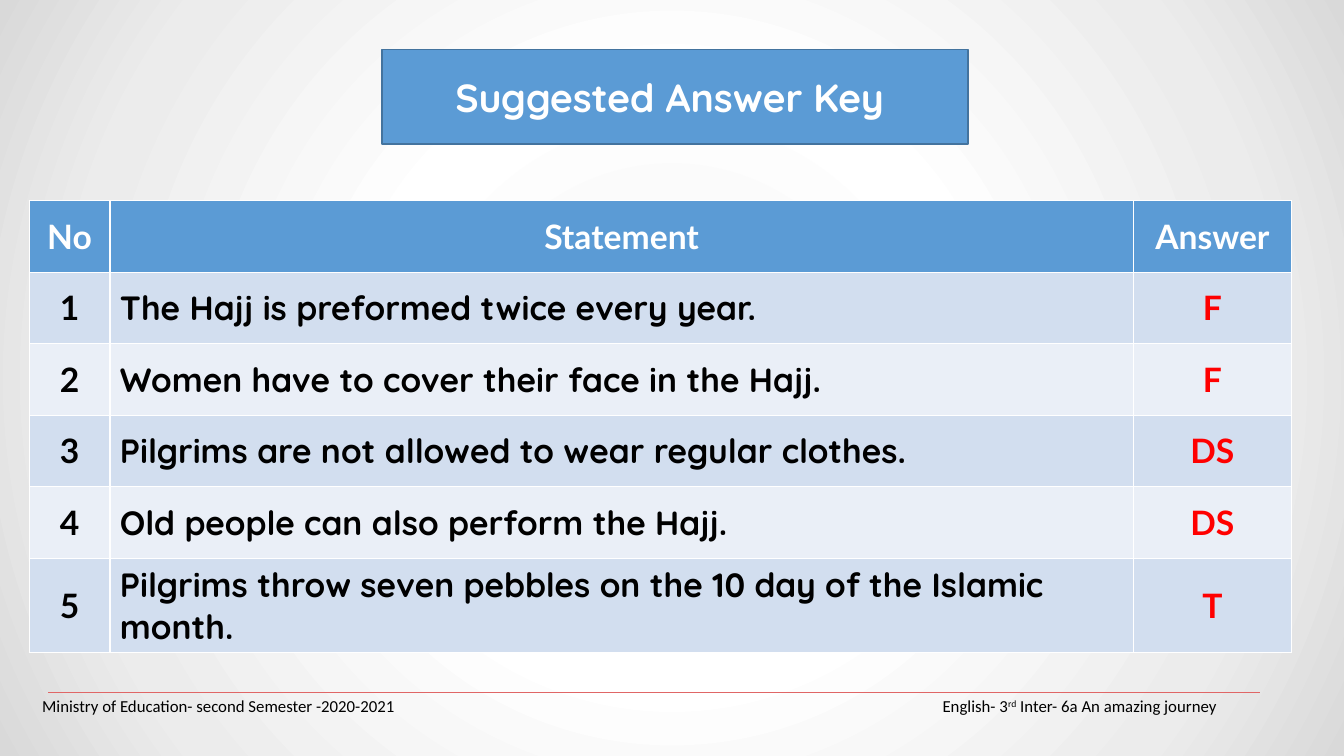
from dataclasses import dataclass

from pptx import Presentation
from pptx import util as u
from pptx.dml.color import RGBColor
from pptx.enum import shapes, text
from pptx.oxml import parse_xml
from pptx.oxml.ns import nsdecls, qn


@dataclass(frozen=True)
class Theme:
    """Colours, fonts and type sizes of the slide."""
    blue: str = "5B9BD5"
    blue_edge: str = "43739E"
    bands: tuple = ("D2DEEF", "EAEFF7")
    white: str = "FFFFFF"
    black: str = "000000"
    red: str = "FF0000"
    rule: str = "E06666"
    backdrop: tuple = ((0, "F2F2F2"), (39, "FFFFFF"), (78, "ECECEC"), (100, "D9D9D9"))
    rounded: str = "Quicksand"
    sans: str = "Lato"
    small: str = "Calibri"
    title_size: int = 28
    table_size: int = 24
    footer_size: int = 12


THEME = Theme()
HEADINGS = ("No", "Statement", "Answer")
ANSWERS = (
    ("The Hajj is preformed twice every year.", "F"),
    ("Women have to cover their face in the Hajj.", "F"),
    ("Pilgrims are not allowed to wear regular clothes.", "DS"),
    ("Old people can also perform the Hajj.", "DS"),
    ("Pilgrims throw seven pebbles on the 10 day of the Islamic month.", "T"),
)


def rgb(colour):
    """Turn a hex string into a colour."""
    return RGBColor.from_string(colour)


def add_run(paragraph, words, font, size, colour, bold=False):
    """Append a formatted run to a paragraph."""
    run = paragraph.add_run()
    run.text = words
    run.font.name, run.font.size, run.font.bold = font, u.Pt(size), bold
    run.font.color.rgb = rgb(colour)
    return run


def paint_backdrop(slide):
    """Give the slide a circular grey gradient."""
    slide.background.fill.solid()
    stops = "".join(f'<a:gs pos="{position * 1000}"><a:srgbClr val="{colour}"/></a:gs>'
                    for position, colour in THEME.backdrop)
    gradient = parse_xml(
        f'<a:gradFill {nsdecls("a")} rotWithShape="1"><a:gsLst>{stops}</a:gsLst>'
        '<a:path path="circle"><a:fillToRect l="50000" t="50000" r="50000" b="50000"/>'
        '</a:path></a:gradFill>')
    properties = slide.element.find(".//" + qn("p:bgPr"))
    properties.replace(properties.find(qn("a:solidFill")), gradient)


def place_title(slide, left, top, width, height):
    """Turn the title placeholder into the blue banner."""
    banner = slide.shapes.title
    banner.left, banner.top = u.Inches(left), u.Inches(top)
    banner.width, banner.height = u.Inches(width), u.Inches(height)
    banner.fill.solid()
    banner.fill.fore_color.rgb = rgb(THEME.blue)
    banner.line.color.rgb = rgb(THEME.blue_edge)
    banner.line.width = u.Pt(1)
    banner.text_frame.vertical_anchor = text.MSO_ANCHOR.MIDDLE
    heading = banner.text_frame.paragraphs[0]
    heading.alignment = text.PP_ALIGN.CENTER
    add_run(heading, "Suggested Answer Key ", THEME.rounded, THEME.title_size, THEME.white, True)


def fill_cell(cell, words, fill, font, colour, alignment):
    """Write one table cell."""
    cell.fill.solid()
    cell.fill.fore_color.rgb = rgb(fill)
    cell.vertical_anchor = text.MSO_ANCHOR.MIDDLE
    paragraph = cell.text_frame.paragraphs[0]
    paragraph.alignment = alignment
    add_run(paragraph, words, font, THEME.table_size, colour, True)


def place_answers(slide, left, top, width, height):
    """Draw the answer table, whose last row takes the spare height."""
    number_width, answer_width, row_height = 0.8, 1.57, 0.71
    table = slide.shapes.add_table(len(ANSWERS) + 1, len(HEADINGS), u.Inches(left),
                                   u.Inches(top), u.Inches(width), u.Inches(height)).table
    widths = (number_width, width - number_width - answer_width, answer_width)
    for column, column_width in zip(table.columns, widths):
        column.width = u.Inches(column_width)
    for row in table.rows:
        row.height = u.Inches(row_height)
    table.rows[len(ANSWERS)].height = u.Inches(height - row_height * len(ANSWERS))

    center, start = text.PP_ALIGN.CENTER, text.PP_ALIGN.LEFT
    for column, heading in enumerate(HEADINGS):
        fill_cell(table.cell(0, column), heading, THEME.blue, THEME.sans, THEME.white, center)
    for number, (statement, answer) in enumerate(ANSWERS, start=1):
        band = THEME.bands[(number - 1) % 2]
        fill_cell(table.cell(number, 0), str(number), band, THEME.sans, THEME.black, center)
        fill_cell(table.cell(number, 1), statement, band, THEME.rounded, THEME.black, start)
        fill_cell(table.cell(number, 2), answer, band, THEME.sans, THEME.red, center)


def place_footer(slide, left, top, width, height):
    """Draw the red rule and the course line below it."""
    rule = slide.shapes.add_connector(
        shapes.MSO_CONNECTOR.STRAIGHT, u.Inches(left + 0.16), u.Inches(top),
        u.Inches(left + width - 0.19), u.Inches(top))
    rule.line.color.rgb = rgb(THEME.rule)
    rule.line.width = u.Pt(0.75)
    rule.element.spPr.append(parse_xml(f'<a:effectLst {nsdecls("a")}/>'))

    course = slide.shapes.add_textbox(u.Inches(left), u.Inches(top), u.Inches(width),
                                      u.Inches(height)).text_frame
    course.word_wrap = True
    course.margin_top = course.margin_bottom = 0
    course.vertical_anchor = text.MSO_ANCHOR.MIDDLE
    line = course.paragraphs[0]
    unit_end = u.Inches(width - 0.72)
    line._p.get_or_add_pPr().append(parse_xml(
        f'<a:tabLst {nsdecls("a")}><a:tab pos="{unit_end}" algn="r"/></a:tabLst>'))
    style = (THEME.small, THEME.footer_size, THEME.black)
    add_run(line, "Ministry of Education- second Semester -2020-2021\tEnglish- 3", *style)
    ordinal = add_run(line, "rd", *style)
    ordinal.font._element.set("baseline", "30000")
    add_run(line, " Inter- 6a An amazing journey", *style)


def main():
    """Build and save the answer key slide."""
    deck = Presentation()
    deck.slide_width, deck.slide_height = u.Inches(13.33), u.Inches(7.5)
    slide = deck.slides.add_slide(deck.slide_layouts.get_by_name("Title Only"))
    paint_backdrop(slide)
    place_answers(slide, 0.29, 1.99, 12.52, 4.44)
    place_title(slide, 3.79, 0.49, 5.81, 0.94)
    place_footer(slide, 0.32, 6.87, 12.37, 0.26)
    deck.save("out.pptx")


if __name__ == "__main__":
    main()
